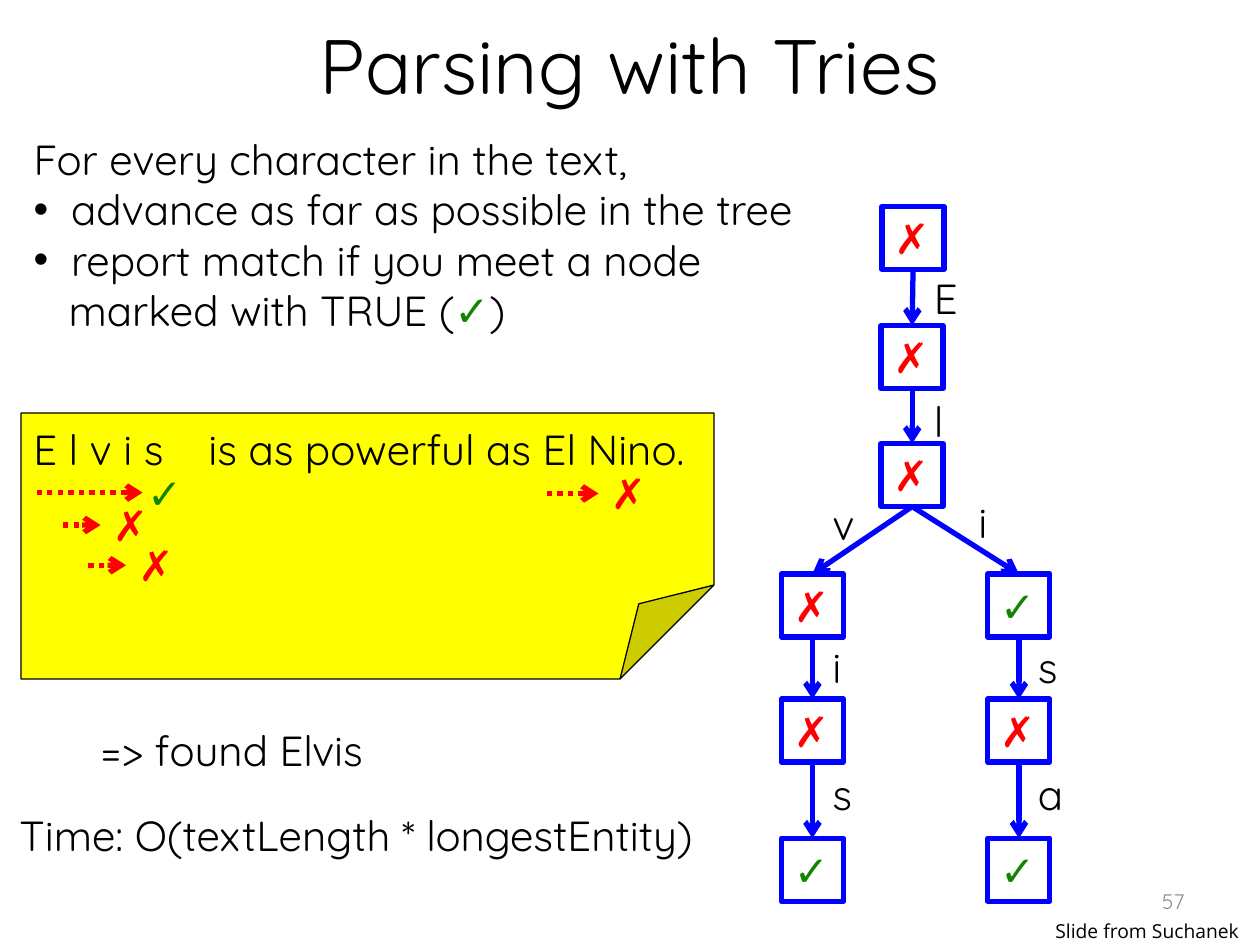
from lxml import etree
from pptx import Presentation
from pptx.dml.color import RGBColor
from pptx.enum.dml import MSO_LINE
from pptx.enum.shapes import MSO_CONNECTOR, MSO_SHAPE
from pptx.enum.text import MSO_ANCHOR, MSO_AUTO_SIZE, PP_ALIGN
from pptx.oxml.ns import qn
from pptx.util import Pt

STRAIGHT = MSO_CONNECTOR.STRAIGHT
FOLDED_CORNER, RECTANGLE = MSO_SHAPE.FOLDED_CORNER, MSO_SHAPE.RECTANGLE
DOTTED = MSO_LINE.ROUND_DOT
FIXED_SIZE = MSO_AUTO_SIZE.NONE
TOP, MIDDLE = MSO_ANCHOR.TOP, MSO_ANCHOR.MIDDLE
LEFT, CENTER, RIGHT = PP_ALIGN.LEFT, PP_ALIGN.CENTER, PP_ALIGN.RIGHT
BOTTOM_SIDE, TOP_SIDE = 2, 0
BLACK, RED, GREEN, BLUE = "000000", "FF0000", "128400", "0001FF"
YES, NO = "✓", "✗"
MARK_COLORS = {YES: GREEN, NO: RED}


def write(shape, text, size=24, color=BLACK, align=LEFT, anchor=TOP, font="Quicksand"):
    frame = shape.text_frame
    frame.text = text
    frame.word_wrap = True
    frame.auto_size = FIXED_SIZE
    frame.vertical_anchor = anchor
    for paragraph in frame.paragraphs:
        paragraph.alignment = align
        for run in paragraph.runs:
            run.font.name = font
            run.font.size = Pt(size)
            run.font.color.rgb = RGBColor.from_string(color)


def draw_arrow(start_x, start_y, end_x, end_y, color):
    arrow = slide.shapes.add_connector(
        STRAIGHT, Pt(start_x), Pt(start_y), Pt(end_x), Pt(end_y))
    arrow.line.color.rgb = RGBColor.from_string(color)
    arrow.line.width = Pt(3)
    if color == RED:
        arrow.line.dash_style = DOTTED
    properties = arrow.element.spPr
    etree.SubElement(properties.find(qn("a:ln")), qn("a:tailEnd"), type="arrow")
    etree.SubElement(properties, qn("a:effectLst"))
    return arrow


presentation = Presentation()
presentation.slide_width = Pt(720)
presentation.slide_height = Pt(540)
slide = presentation.slides.add_slide(presentation.slide_layouts[1])

title = slide.shapes.title
title.left, title.top, title.width, title.height = Pt(36), Pt(0), Pt(648), Pt(72.5)
write(title, "Parsing with Tries", size=44, align=CENTER, anchor=MIDDLE)

body = slide.placeholders[1]
body.left, body.top, body.width, body.height = Pt(12), Pt(72.5), Pt(708), Pt(152.5)
write(body, "For every character in the text,\n"
            "advance as far as possible in the tree\n"
            "report match if you meet a node\n"
            "marked with TRUE (")
steps = body.text_frame.paragraphs
for text, color in [(YES, GREEN), (")", BLACK)]:
    run = steps[-1].add_run()
    run.text = text
    run.font.name = "Quicksand"
    run.font.size = Pt(24)
    run.font.color.rgb = RGBColor.from_string(color)
for paragraph, margin, bullet in zip(steps, [0, 21.5, 21.5, 20], ["", "•", "•", ""]):
    paragraph.space_before = Pt(0)
    properties = paragraph._p.get_or_add_pPr()
    properties.set("marL", str(Pt(margin)))
    properties.set("indent", str(Pt(-margin if bullet else 0)))
    if bullet:
        etree.SubElement(properties, qn("a:buFont"), typeface="Arial")
        etree.SubElement(properties, qn("a:buChar"), char=bullet)
    else:
        etree.SubElement(properties, qn("a:buNone"))

note = slide.shapes.add_shape(FOLDED_CORNER, Pt(12), Pt(236), Pt(396), Pt(152))
fold = note.element.spPr.find(qn("a:prstGeom")).find(qn("a:avLst"))
etree.SubElement(fold, qn("a:gd"), name="adj", fmla="val 35300")
note.shadow.inherit = False
note.fill.solid()
note.fill.fore_color.rgb = RGBColor.from_string("FFFF00")
note.line.color.rgb = RGBColor.from_string(BLACK)
note.line.width = Pt(0.75)
write(note, "E l v i s\tis as powerful as El Nino.")
note.text_frame.margin_top = Pt(6)
note.text_frame.margin_bottom = Pt(0)
tab_list = etree.SubElement(note.text_frame.paragraphs[0]._p.get_or_add_pPr(), qn("a:tabLst"))
etree.SubElement(tab_list, qn("a:tab"), pos=str(Pt(100)), algn="l")

scans = [
    (21, 81.5, 281.5, YES, 77, 263.5),
    (36, 57.5, 300, NO, 57.5, 282),
    (50.5, 72, 323, NO, 72, 304.5),
    (312.5, 342, 282, NO, 342, 263.5),
]
for start, end, height, mark, mark_left, mark_top in scans:
    draw_arrow(start, height, end, height, RED)
    result = slide.shapes.add_textbox(Pt(mark_left), Pt(mark_top), Pt(36), Pt(36))
    write(result, mark, color=MARK_COLORS[mark])

nodes = {}
for name, left, top, mark in [
    ("root", 504, 118, NO),
    ("E", 503.5, 186, NO),
    ("El", 503.5, 253.5, NO),
    ("Elv", 446.5, 328, NO),
    ("Elvi", 446.5, 399.5, NO),
    ("Elvis", 446.5, 479, YES),
    ("Eli", 564.5, 328, YES),
    ("Elis", 564.5, 399.5, NO),
    ("Elisa", 564.5, 479, YES),
]:
    node = slide.shapes.add_shape(RECTANGLE, Pt(left), Pt(top), Pt(35.5), Pt(36))
    node.shadow.inherit = False
    node.fill.background()
    node.line.color.rgb = RGBColor.from_string(BLUE)
    node.line.width = Pt(3)
    write(node, mark, color=MARK_COLORS[mark])
    nodes[name] = node

for parent, child, label_left, label_top in [
    ("root", "E", 526.5, 152),
    ("E", "El", 526.5, 222.5),
    ("El", "Elv", 468.5, 281.5),
    ("El", "Eli", 552, 280),
    ("Elv", "Elvi", 468.5, 363),
    ("Elvi", "Elvis", 468.5, 435.5),
    ("Eli", "Elis", 586, 363),
    ("Elis", "Elisa", 586, 435.5),
]:
    edge = draw_arrow(0, 0, 0, 0, BLUE)
    edge.begin_connect(nodes[parent], BOTTOM_SIDE)
    edge.end_connect(nodes[child], TOP_SIDE)
    label = slide.shapes.add_textbox(Pt(label_left), Pt(label_top), Pt(26), Pt(36))
    write(label, child[-1])

found = slide.shapes.add_textbox(Pt(50.5), Pt(410.5), Pt(228), Pt(36))
write(found, "=> found Elvis")

runtime = slide.shapes.add_textbox(Pt(4), Pt(459), Pt(434), Pt(36))
write(runtime, "Time: O(textLength * longestEntity)")

slide_number = slide.shapes.add_textbox(Pt(516), Pt(500.5), Pt(168), Pt(29))
write(slide_number, "57", size=12, color="8C8C8C", align=RIGHT, anchor=MIDDLE)

credit = slide.shapes.add_textbox(Pt(596), Pt(521.5), Pt(124), Pt(21))
write(credit, "Slide from Suchanek", size=11, font="Open Sans")

presentation.save("out.pptx")
